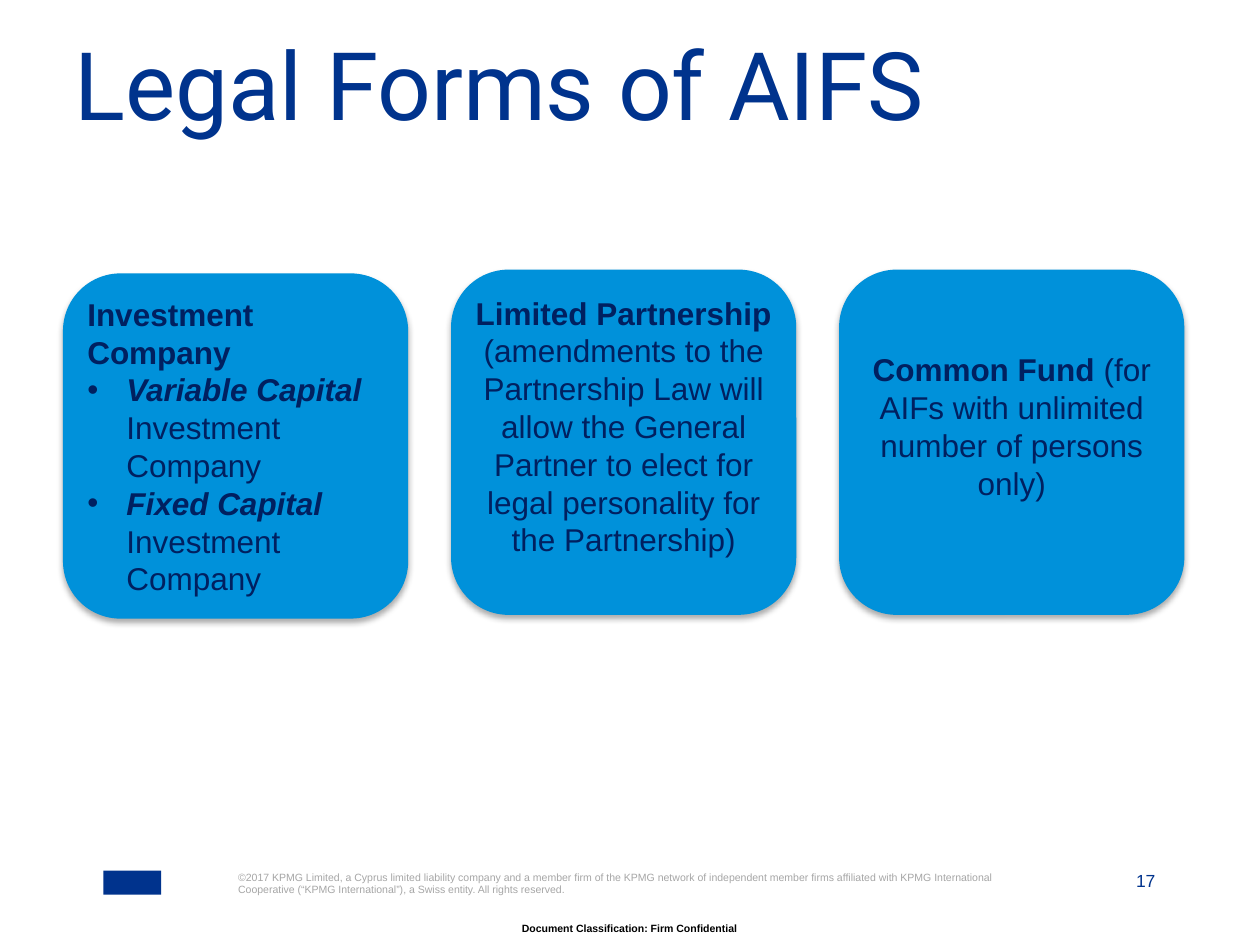
from dataclasses import dataclass

from lxml import etree
from pptx import Presentation
from pptx import util as u
from pptx.dml.color import RGBColor
from pptx.enum import shapes, text
from pptx.oxml.ns import qn


@dataclass(frozen=True)
class Theme:
    navy: str = "00338D"
    card_fill: str = "0091DA"
    card_text: str = "002060"
    grey: str = "A6A6A6"
    black: str = "000000"
    title_font: str = "Roboto"
    body_font: str = "Arial"
    title_size: float = 54
    card_size: float = 18
    page_size: float = 10
    small_size: float = 6


THEME = Theme()
LEFT, CENTER, RIGHT = text.PP_ALIGN.LEFT, text.PP_ALIGN.CENTER, text.PP_ALIGN.RIGHT

# Card grid, in inches
GRID_LEFT, GRID_TOP, CARD, GAP = 0.5, 2.14, 2.74, 0.34
PADDING = 0.06
BULLET_INDENT = 0.31

# Each card: alignment, top offset, extra room below the text, paragraphs.
# Each paragraph: bulleted or not, then (wording, bold, italic) runs.
CARDS = [
    (LEFT, 0.03, 0, [
        (False, [("Investment Company", True, False)]),
        (True, [("Variable Capital ", True, True), ("Investment Company", False, False)]),
        (True, [("Fixed Capital ", True, True), ("Investment Company", False, False)]),
    ]),
    (CENTER, 0, 0.26, [
        (False, [("Limited Partnership ", True, False),
                 ("(amendments to the Partnership Law will allow the General Partner "
                  "to elect for legal personality for the Partnership)", False, False)]),
    ]),
    (CENTER, 0, 0.26, [
        (False, [("Common Fund ", True, False),
                 ("(for AIFs with unlimited number of persons only)", False, False)]),
    ]),
]


def set_font(paragraph, size, color, name=THEME.body_font, bold=None):
    font = paragraph.font
    font.size, font.name, font.bold = u.Pt(size), name, bold
    font.color.rgb = RGBColor.from_string(color)


def set_frame(frame, anchor, padding=0, below=0):
    frame.word_wrap = True
    frame.vertical_anchor = anchor
    frame.margin_left = frame.margin_right = frame.margin_top = u.Inches(padding)
    frame.margin_bottom = u.Inches(padding + below)


def fill_plain(shape, color):
    shape.shadow.inherit = False
    shape.fill.solid()
    shape.fill.fore_color.rgb = RGBColor.from_string(color)
    shape.line.fill.background()


def add_label(slide, box, wording, size, color, align=LEFT,
              anchor=text.MSO_ANCHOR.TOP, spacing=None, **font):
    label = slide.shapes.add_textbox(*map(u.Inches, box)).text_frame
    set_frame(label, anchor)
    line = label.paragraphs[0]
    line.text, line.alignment, line.line_spacing = wording, align, spacing
    set_font(line, size, color, **font)


def add_bullet(paragraph):
    props = paragraph._p.get_or_add_pPr()
    props.set("marL", str(u.Inches(BULLET_INDENT)))
    props.set("indent", str(-u.Inches(BULLET_INDENT)))
    etree.SubElement(props, qn("a:buFont"), typeface=THEME.body_font)
    etree.SubElement(props, qn("a:buChar"), char="•")


def add_soft_shadow(shape):
    effects = shape._element.spPr.find(qn("a:effectLst"))
    shadow = etree.SubElement(effects, qn("a:outerShdw"), blurRad=str(u.Pt(3.5)),
                              dist=str(u.Pt(2.2)), dir="5400000", rotWithShape="0")
    color = etree.SubElement(shadow, qn("a:srgbClr"), val=THEME.black)
    etree.SubElement(color, qn("a:alpha"), val="32000")


def add_card(slide, column, align, offset, below, paragraphs):
    box = (GRID_LEFT + column * (CARD + GAP), GRID_TOP + offset, CARD, CARD)
    card = slide.shapes.add_shape(shapes.MSO_SHAPE.ROUNDED_RECTANGLE, *map(u.Inches, box))
    fill_plain(card, THEME.card_fill)
    add_soft_shadow(card)
    frame = card.text_frame
    set_frame(frame, text.MSO_ANCHOR.MIDDLE, PADDING, below)
    for index, (bulleted, runs) in enumerate(paragraphs):
        paragraph = frame.add_paragraph() if index else frame.paragraphs[0]
        paragraph.alignment = align
        if bulleted:
            add_bullet(paragraph)
        set_font(paragraph, THEME.card_size, THEME.card_text)
        for wording, bold, italic in runs:
            run = paragraph.add_run()
            run.text, run.font.bold, run.font.italic = wording, bold, italic


def add_footer(slide):
    # Plain block in the place of the firm's mark
    mark = slide.shapes.add_shape(shapes.MSO_SHAPE.RECTANGLE,
                                  *map(u.Inches, (0.82, 6.91, 0.46, 0.19)))
    fill_plain(mark, THEME.navy)
    add_label(slide, (7.86, 6.91, 1.31, 0.16), "17", THEME.page_size, THEME.navy,
              RIGHT, text.MSO_ANCHOR.BOTTOM)
    add_label(slide, (2.02, 7.32, 5.95, 0.1), "Document Classification: Firm Confidential",
              THEME.small_size, THEME.black, CENTER, bold=True)
    add_label(slide, (1.89, 6.91, 6.36, 0.41),
              "©2017 KPMG Limited, a Cyprus limited liability company and a member firm of "
              "the KPMG network of independent member firms affiliated with KPMG International "
              "Cooperative (“KPMG International”), a Swiss entity. All rights reserved.",
              THEME.small_size, THEME.grey)


def main():
    deck = Presentation()
    deck.slide_width, deck.slide_height = u.Inches(10), u.Inches(7.5)
    slide = deck.slides.add_slide(deck.slide_layouts[6])

    add_footer(slide)
    # Title
    add_label(slide, (0.59, 0.45, 8.35, 0.57), "Legal Forms of AIFS", THEME.title_size,
              THEME.navy, spacing=0.7, name=THEME.title_font)
    # One card for each legal form
    for column, card in enumerate(CARDS):
        add_card(slide, column, *card)

    deck.save("out.pptx")


if __name__ == "__main__":
    main()
